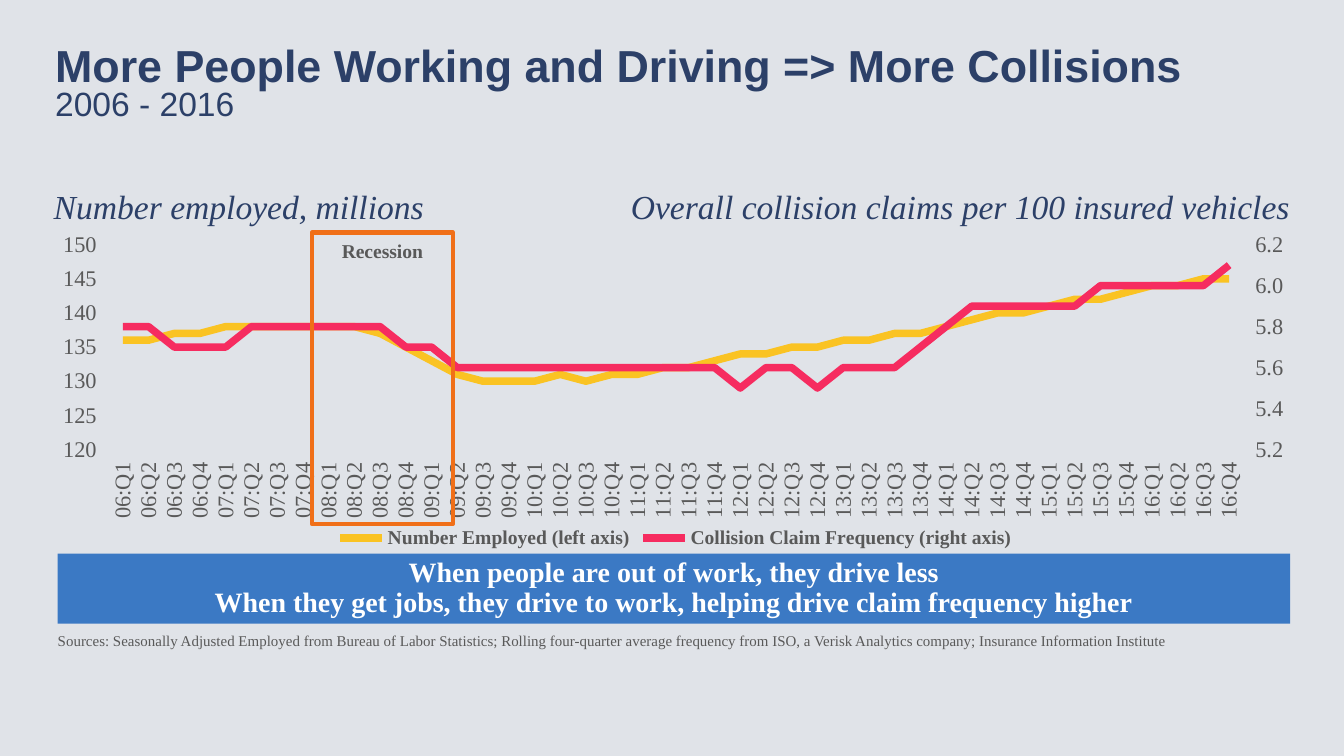
"""Builds a slide that sets employment against collision claim frequency."""
from copy import deepcopy
from dataclasses import dataclass

from lxml.etree import SubElement
from pptx import Presentation
from pptx.chart.axis import ValueAxis
from pptx.chart.data import CategoryChartData
from pptx.dml.color import RGBColor
from pptx.enum.chart import XL_CHART_TYPE, XL_LEGEND_POSITION, XL_TICK_MARK
from pptx.enum.shapes import MSO_SHAPE
from pptx.enum.text import MSO_ANCHOR, PP_ALIGN
from pptx.oxml import parse_xml
from pptx.oxml.ns import nsdecls, qn
from pptx.util import Inches, Pt

COLUMNS, ROWS = 100, 56.25
EMPLOYED = [
    136, 136, 137, 137, 138, 138, 138, 138, 138, 138, 137, 135, 133, 131, 130,
    130, 130, 131, 130, 131, 131, 132, 132, 133, 134, 134, 135, 135, 136, 136,
    137, 137, 138, 139, 140, 140, 141, 142, 142, 143, 144, 144, 145, 145]
FREQUENCY = [
    5.8, 5.8, 5.7, 5.7, 5.7, 5.8, 5.8, 5.8, 5.8, 5.8, 5.8, 5.7, 5.7, 5.6, 5.6,
    5.6, 5.6, 5.6, 5.6, 5.6, 5.6, 5.6, 5.6, 5.6, 5.5, 5.6, 5.6, 5.5, 5.6, 5.6,
    5.6, 5.7, 5.8, 5.9, 5.9, 5.9, 5.9, 5.9, 6, 6, 6, 6, 6, 6.1]
QUARTERS = [f"{year:02}:Q{quarter}" for year in range(6, 17) for quarter in range(1, 5)]


@dataclass(frozen=True)
class Theme:
    """Colours, fonts and type sizes of the slide."""
    background: str = "E0E3E8"
    navy: str = "2C4068"
    grey: str = "595959"
    white: str = "FFFFFF"
    blue: str = "3B79C4"
    orange: str = "F06F18"
    yellow: str = "FAC323"
    pink: str = "F62C60"
    heading_font: str = "Arial"
    body_font: str = "Times New Roman"
    title: float = 24
    subtitle: float = 18
    banner: float = 15
    axis: float = 12
    label: float = 10.5
    source: float = 8


def color(value):
    """Turns a hex string into a colour."""
    return RGBColor.from_string(value)


def style_font(font, name, size, ink, bold=False, italic=False):
    """Sets every property of a font."""
    font.name, font.size, font.bold, font.italic = name, Pt(size), bold, italic
    font.color.rgb = color(ink)


def write_text(frame, text, align=PP_ALIGN.LEFT, anchor=MSO_ANCHOR.TOP,
               inset=0, wrap=True, spacing=None, **font):
    """Fills a text frame with one paragraph, broken at each newline."""
    frame.word_wrap, frame.vertical_anchor = wrap, anchor
    frame.margin_left = frame.margin_right = Inches(inset)
    frame.margin_top = frame.margin_bottom = Inches(inset / 2)
    paragraph = frame.paragraphs[0]
    paragraph.alignment, paragraph.line_spacing = align, spacing
    for index, line in enumerate(text.split("\n")):
        if index:
            paragraph.add_line_break()
        run = paragraph.add_run()
        run.text = line
        style_font(run.font, **font)


@dataclass
class SlideBuilder:
    """Holds the theme and the slide, and adds elements by grid cell."""
    presentation: object
    slide: object
    theme: Theme

    def place(self, left, top, width, height):
        """Converts grid columns and rows to slide lengths."""
        column = self.presentation.slide_width / COLUMNS
        row = self.presentation.slide_height / ROWS
        return (round(left * column), round(top * row),
                round(width * column), round(height * row))

    def text(self, cells, text, **style):
        """Adds a text box."""
        write_text(self.slide.shapes.add_textbox(*self.place(*cells)).text_frame, text, **style)

    def box(self, cells, text, fill=None, line=None, **style):
        """Adds a rectangle with centred text."""
        shape = self.slide.shapes.add_shape(MSO_SHAPE.RECTANGLE, *self.place(*cells))
        shape.shadow.inherit = False
        if fill:
            shape.fill.solid()
            shape.fill.fore_color.rgb = color(fill)
        else:
            shape.fill.background()
        if line:
            shape.line.color.rgb, shape.line.width = color(line), Pt(2.25)
        else:
            shape.line.fill.background()
        write_text(shape.text_frame, text, align=PP_ALIGN.CENTER, inset=0.1, **style)

    def style_axis(self, axis):
        """Gives an axis plain labels and no line."""
        axis.has_major_gridlines = False
        axis.major_tick_mark = XL_TICK_MARK.OUTSIDE
        axis.format.line.fill.background()
        style_font(axis.tick_labels.font, self.theme.body_font, self.theme.axis, self.theme.grey)

    def scale_axis(self, axis, low, high, step, number_format):
        """Sets the range and number format of a value axis."""
        axis.minimum_scale, axis.maximum_scale, axis.major_unit = low, high, step
        axis.tick_labels.number_format = number_format
        axis.tick_labels.number_format_is_linked = False

    def chart(self, cells, categories, series, plot_layout):
        """Adds a line chart whose last series uses a right axis."""
        data = CategoryChartData()
        data.categories = categories
        for name, values, _ in series:
            data.add_series(name, values)
        chart = self.slide.shapes.add_chart(XL_CHART_TYPE.LINE, *self.place(*cells), data).chart
        chart.has_title = False
        theme = self.theme
        style_font(chart.font, theme.body_font, theme.axis, theme.grey)
        chart.has_legend = True
        chart.legend.position = XL_LEGEND_POSITION.BOTTOM
        chart.legend.include_in_layout = False
        style_font(chart.legend.font, theme.body_font, theme.label, theme.grey, bold=True)
        chart.plots[0].vary_by_categories = False
        for line, (_, _, shade) in zip(chart.plots[0].series, series):
            line.smooth = False
            line.format.line.width = Pt(4)
            line.format.line.color.rgb = color(shade)
        for axis in (chart.category_axis, chart.value_axis):
            self.style_axis(axis)
        chart.element.xpath(".//c:catAx/c:txPr/a:bodyPr")[0].set("rot", "-5400000")
        self.scale_axis(chart.value_axis, 120, 150, 5, "#,##0")
        self.scale_axis(self.add_right_axis(chart), 5.2, 6.2, 0.1, "0.0")
        self.set_plot_layout(chart, *plot_layout)

    def add_right_axis(self, chart):
        """Moves the last series to its own plot and returns its value axis."""
        area = chart.element.xpath(".//c:plotArea")[0]
        plot, value, category = (area.find(qn(f"c:{tag}")) for tag in ("lineChart", "valAx", "catAx"))
        right_plot, right_value, right_category = map(deepcopy, (plot, value, category))
        plot.remove(plot.findall(qn("c:ser"))[-1])
        right_plot.remove(right_plot.find(qn("c:ser")))
        plot.addnext(right_plot)
        value.addnext(right_value)
        right_value.addnext(right_category)
        category_id, value_id = "5001", "5002"
        for reference, number in zip(right_plot.findall(qn("c:axId")), (category_id, value_id)):
            reference.set("val", number)
        for axis, own, other in ((right_category, category_id, value_id),
                                 (right_value, value_id, category_id)):
            axis.find(qn("c:axId")).set("val", own)
            axis.find(qn("c:crossAx")).set("val", other)
        right_value.find(qn("c:axPos")).set("val", "r")
        right_value.find(qn("c:crosses")).set("val", "max")
        ValueAxis(right_category).visible = False
        return ValueAxis(right_value)

    def set_plot_layout(self, chart, left, top, width, height):
        """Fixes the inner plot area as shares of the chart."""
        area = chart.element.xpath(".//c:plotArea")[0]
        for old in area.findall(qn("c:layout")):
            area.remove(old)
        layout = parse_xml(f"<c:layout {nsdecls('c')}><c:manualLayout/></c:layout>")
        settings = {"layoutTarget": "inner", "xMode": "edge", "yMode": "edge",
                    "x": left, "y": top, "w": width, "h": height}
        for tag, value in settings.items():
            SubElement(layout[0], qn(f"c:{tag}")).set("val", str(value))
        area.insert(0, layout)


def main():
    """Builds and saves the slide."""
    theme = Theme()
    presentation = Presentation()
    presentation.slide_width, presentation.slide_height = Inches(10), Inches(10) * 9 // 16
    slide = presentation.slides.add_slide(presentation.slide_layouts[6])
    slide.background.fill.solid()
    slide.background.fill.fore_color.rgb = color(theme.background)
    builder = SlideBuilder(presentation, slide, theme)
    heading = dict(name=theme.heading_font, ink=theme.navy)
    caption = dict(name=theme.body_font, size=theme.subtitle, ink=theme.navy, italic=True)
    builder.text((4.1, 6.2, 91.8, 6.2), "2006 - 2016", size=theme.subtitle, **heading)
    builder.text((4.1, 2.8, 91.8, 2.7), "More People Working and Driving => More Collisions",
                 size=theme.title, bold=True, **heading)
    builder.box((4.3, 41.2, 91.7, 5.2), "When people are out of work, they drive less\n"
                "When they get jobs, they drive to work, helping drive claim frequency higher",
                fill=theme.blue, anchor=MSO_ANCHOR.MIDDLE, spacing=0.9,
                name=theme.body_font, size=theme.banner, ink=theme.white, bold=True)
    builder.chart((3.5, 17, 93.6, 24.2), QUARTERS,
                  [("Number Employed (left axis)", EMPLOYED, theme.yellow),
                   ("Collision Claim Frequency (right axis)", FREQUENCY, theme.pink)],
                  (0.05, 0.05, 0.9, 0.63))
    builder.box((23.2, 17.3, 10.5, 21.7), "Recession", line=theme.orange, wrap=False,
                name=theme.body_font, size=theme.label, ink=theme.grey, bold=True)
    builder.text((4.3, 47, 84, 3.4), "Sources: Seasonally Adjusted Employed from Bureau of Labor "
                 "Statistics; Rolling four-quarter average frequency from ISO, a Verisk Analytics "
                 "company; Insurance Information Institute",
                 name=theme.body_font, size=theme.source, ink=theme.grey)
    builder.text((4, 13.8, 33.6, 4.7), "Number employed, millions", **caption)
    builder.text((44.5, 13.8, 51.5, 4.7), "Overall collision claims per 100 insured vehicles",
                 align=PP_ALIGN.RIGHT, **caption)
    presentation.save("out.pptx")


if __name__ == "__main__":
    main()
